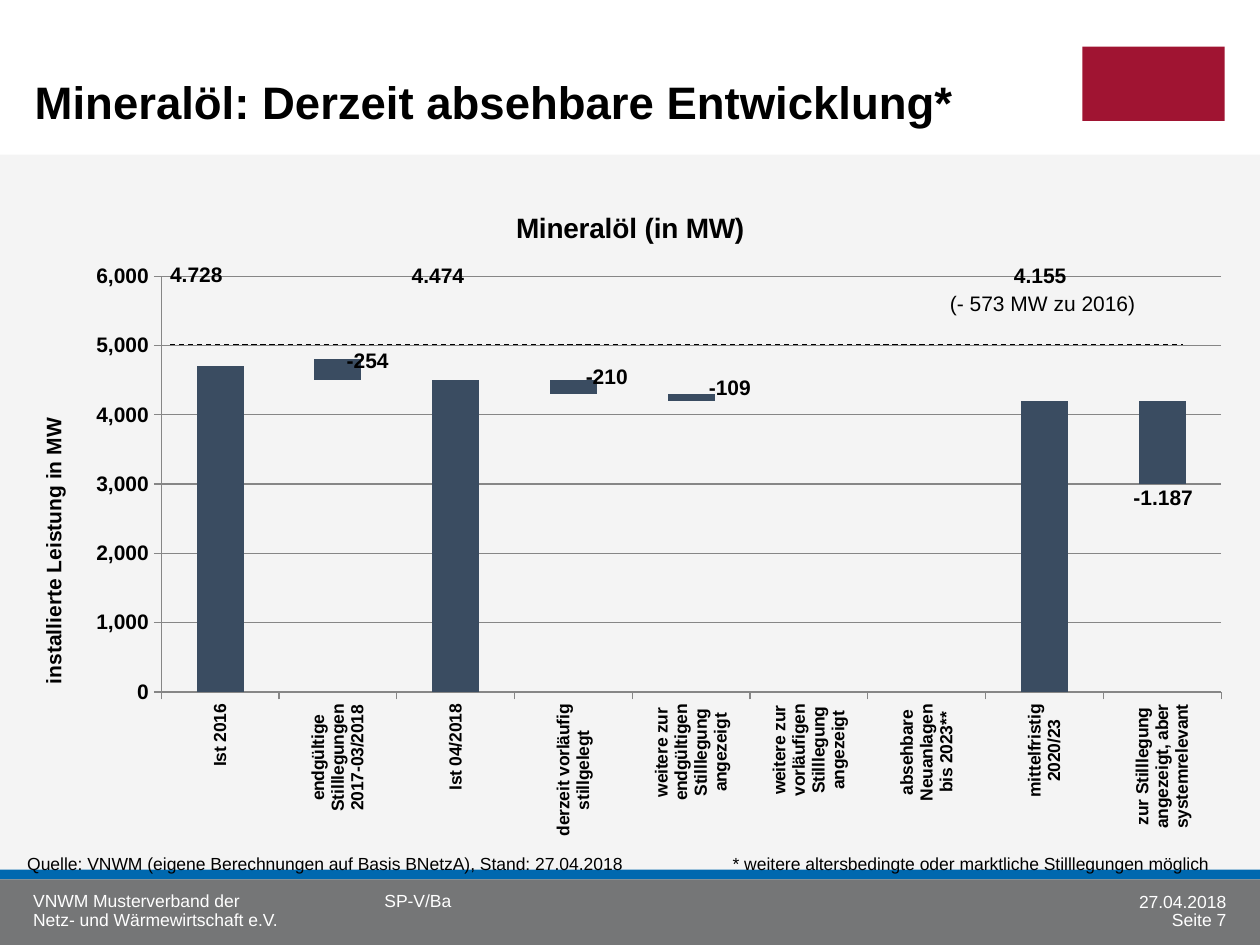
"""Builds the slide on the foreseeable development of mineral oil capacity."""
from dataclasses import dataclass

from lxml.etree import SubElement
from pptx import Presentation
from pptx.chart.data import CategoryChartData
from pptx.dml.color import RGBColor as RGB
from pptx.enum.chart import XL_CHART_TYPE as ChartType, XL_TICK_MARK as Tick
from pptx.enum.dml import MSO_LINE_DASH_STYLE as Dash
from pptx.enum.shapes import MSO_CONNECTOR as Conn, MSO_SHAPE as Shape
from pptx.enum.text import MSO_ANCHOR as Anchor, MSO_AUTO_SIZE as AutoSize, PP_ALIGN as Align
from pptx.oxml.ns import qn
from pptx.util import Cm, Pt


@dataclass(frozen=True)
class Theme:
    font: str = "Arial"
    black: RGB = RGB(0, 0, 0)
    white: RGB = RGB(255, 255, 255)
    panel: RGB = RGB(0xF4, 0xF4, 0xF4)
    blue: RGB = RGB(0x00, 0x68, 0xAF)
    grey: RGB = RGB(0x75, 0x76, 0x77)
    red: RGB = RGB(0xA0, 0x14, 0x32)
    bar: RGB = RGB(0x3A, 0x4C, 0x61)
    grid: RGB = RGB(0x86, 0x86, 0x86)
    title: int = 26
    chart_title: int = 16
    label: int = 12
    small: int = 10


T = Theme()
CHART_WIDTH, CHART_HEIGHT = 24.79, 13.41

BARS = [
    ("Ist 2016", 0, 4700),
    ("endgültige\nStilllegungen\n2017-03/2018", 4500, 300),
    ("Ist 04/2018", None, 4500),
    ("derzeit vorläufig\nstillgelegt", 4300, 200),
    ("weitere zur\nendgültigen\nStilllegung\nangezeigt", 4200, 100),
    ("weitere zur\nvorläufigen\nStilllegung\nangezeigt", 4200, 0),
    ("absehbare\nNeuanlagen\nbis 2023**", 4200, 0),
    ("mittelfristig\n2020/23", None, 4200),
    ("zur Stilllegung\nangezeigt, aber\nsystemrelevant", 3000, 1200),
]

BAR_LABELS = [
    ("4.728", 3.18, 4.88, 1.57),
    ("4.474", 8.05, 4.9, 1.57),
    ("4.155", 20.19, 4.9, 1.57),
    ("-254", 6.74, 6.61, 1.37),
    ("-210", 11.56, 6.93, 1.37),
    ("-109", 14.04, 7.16, 1.37),
    ("-1.187", 22.6, 9.37, 1.73),
]


def style_font(font, size, color=T.black, bold=False):
    """Apply the theme font with a size, colour and weight."""
    font.name, font.size, font.bold = T.font, Pt(size), bold
    font.color.rgb = color


def fill_text(tf, text, size, color=T.black, bold=False):
    """Set the text of a frame and format every run."""
    tf.text = text
    for p in tf.paragraphs:
        for r in p.runs:
            style_font(r.font, size, color, bold)


def add_block(slide, left, top, width, height, color):
    """Add a plain filled rectangle."""
    sp = slide.shapes.add_shape(Shape.RECTANGLE, Cm(left), Cm(top), Cm(width), Cm(height))
    sp.shadow.inherit = False
    sp.fill.solid()
    sp.fill.fore_color.rgb = color
    sp.line.fill.background()


def add_note(slide, text, left, top, width, size, bold=False):
    """Add a one-line note that keeps its width and the 22 pt line pitch."""
    sp = slide.shapes.add_textbox(Cm(left), Cm(top), Cm(width), Cm(0.94))
    tf = sp.text_frame
    fill_text(tf, text, size, bold=bold)
    tf.word_wrap = False
    tf.auto_size = AutoSize.SHAPE_TO_FIT_TEXT
    tf.paragraphs[0].line_spacing = Pt(22)


def add_footer(slide, text, left, top, width, height=0.41, align=Align.LEFT, spacing=1.0):
    """Add white footer text without insets."""
    sp = slide.shapes.add_textbox(Cm(left), Cm(top), Cm(width), Cm(height))
    tf = sp.text_frame
    fill_text(tf, text, T.small, T.white)
    tf.word_wrap = True
    tf.vertical_anchor = Anchor.MIDDLE
    tf.margin_left = tf.margin_right = tf.margin_top = tf.margin_bottom = 0
    for p in tf.paragraphs:
        p.alignment, p.line_spacing = align, spacing


def add_dashed_line(slide, left, right, y):
    """Add a thin horizontal dashed line."""
    line = slide.shapes.add_connector(Conn.STRAIGHT, Cm(left), Cm(y), Cm(right), Cm(y))
    line.line.color.rgb = T.black
    line.line.width = Pt(0.75)
    line.line.dash_style = Dash.DASH
    SubElement(line._element.spPr, qn("a:effectLst"))


def place(element, index, inner=False, **edges):
    """Give a chart part a manual layout, in centimetres within the chart."""
    for old in element.findall(qn("c:layout")):
        element.remove(old)
    layout = SubElement(element, qn("c:layout"))
    element.insert(index, layout)
    manual = SubElement(layout, qn("c:manualLayout"))
    if inner:
        SubElement(manual, qn("c:layoutTarget")).set("val", "inner")
    for axis in "xy":
        SubElement(manual, qn(f"c:{axis}Mode")).set("val", "edge")
    for edge, length in edges.items():
        whole = CHART_WIDTH if edge in "xw" else CHART_HEIGHT
        SubElement(manual, qn(f"c:{edge}")).set("val", str(length / whole))


def style_axes(chart):
    """Format the category and value axes."""
    cat, val = chart.category_axis, chart.value_axis
    for axis, size in ((cat, T.small), (val, T.label)):
        style_font(axis.tick_labels.font, size, bold=True)
        axis.major_tick_mark = Tick.OUTSIDE
        axis.format.line.color.rgb = T.grid
    cat._element.find(qn("c:txPr")).find(qn("a:bodyPr")).set("rot", "-5400000")
    val.minimum_scale, val.maximum_scale, val.major_unit = 0, 6000, 1000
    val.tick_labels.number_format = "#,##0"
    val.tick_labels.number_format_is_linked = False
    val.major_gridlines.format.line.color.rgb = T.grid
    fill_text(val.axis_title.text_frame, "installierte Leistung in MW", T.label, bold=True)
    place(val.axis_title._element, 1, x=0.44, y=4.62)


def add_waterfall(slide):
    """Add the stacked columns with an invisible base series."""
    names, bases, steps = zip(*BARS)
    data = CategoryChartData(number_format="#,##0")
    data.categories = names
    data.add_series("Series 1", bases)
    data.add_series("Series 2", steps)
    chart = slide.shapes.add_chart(
        ChartType.COLUMN_STACKED, Cm(0.3), Cm(3.73), Cm(CHART_WIDTH), Cm(CHART_HEIGHT),
        data).chart
    style_font(chart.font, T.label)
    chart.has_legend = False
    fill_text(chart.chart_title.text_frame, "Mineralöl (in MW)", T.chart_title, bold=True)
    place(chart.chart_title._element, 1, x=10, y=0.4)
    place(chart._chartSpace.chart.plotArea, 0, inner=True, x=2.95, y=1.84, w=21.37, h=8.38)
    plot = chart.plots[0]
    plot.gap_width, plot.overlap, plot.vary_by_categories = 150, 100, False
    base, step = plot.series
    base.format.fill.background()
    step.format.fill.solid()
    step.format.fill.fore_color.rgb = T.bar
    style_axes(chart)


def add_title(slide, text):
    """Move and format the title placeholder."""
    sp = slide.shapes.title
    sp.left, sp.top, sp.width, sp.height = Cm(0.7), Cm(0.55), Cm(19.51), Cm(2.18)
    tf = sp.text_frame
    fill_text(tf, text, T.title, bold=True)
    tf.vertical_anchor = Anchor.BOTTOM
    tf.margin_left = tf.margin_right = tf.margin_top = 0
    tf.margin_bottom = Cm(0.13)
    tf.paragraphs[0].alignment = Align.LEFT


def main():
    """Build and save the slide."""
    prs = Presentation()
    prs.slide_width, prs.slide_height = Cm(25.4), Cm(19.05)
    slide = prs.slides.add_slide(prs.slide_layouts[5])
    add_block(slide, 0, 3.12, 25.4, 15.93, T.panel)
    add_block(slide, 0, 17.53, 25.4, 0.2, T.blue)
    add_block(slide, 0, 17.73, 25.4, 1.32, T.grey)
    add_block(slide, 21.82, 0.94, 2.87, 1.5, T.red)
    add_title(slide, "Mineralöl: Derzeit absehbare Entwicklung*")
    add_waterfall(slide)
    add_note(slide, "Quelle: VNWM (eigene Berechnungen auf Basis BNetzA), Stand: 27.04.2018",
             0.3, 16.71, 12.73, T.small)
    add_note(slide, "* weitere altersbedingte oder marktliche Stilllegungen möglich",
             14.52, 16.71, 10.19, T.small)
    for text, left, top, width in BAR_LABELS:
        add_note(slide, text, left, top, width, T.label, bold=True)
    add_dashed_line(slide, 3.43, 23.85, 6.95)
    add_note(slide, "(- 573 MW zu 2016)", 18.9, 5.46, 4.29, T.label)
    add_footer(slide, "VNWM Musterverband der\nNetz- und Wärmewirtschaft e.V.",
               0.67, 17.97, 6.76, 0.79, spacing=0.9)
    add_footer(slide, "SP-V/Ba", 7.75, 17.95, 10.13)
    add_footer(slide, "Seite 7", 21.11, 18.34, 3.61, align=Align.RIGHT)
    add_footer(slide, "27.04.2018", 21.11, 17.97, 3.61, align=Align.RIGHT)
    prs.save("out.pptx")


if __name__ == "__main__":
    main()
